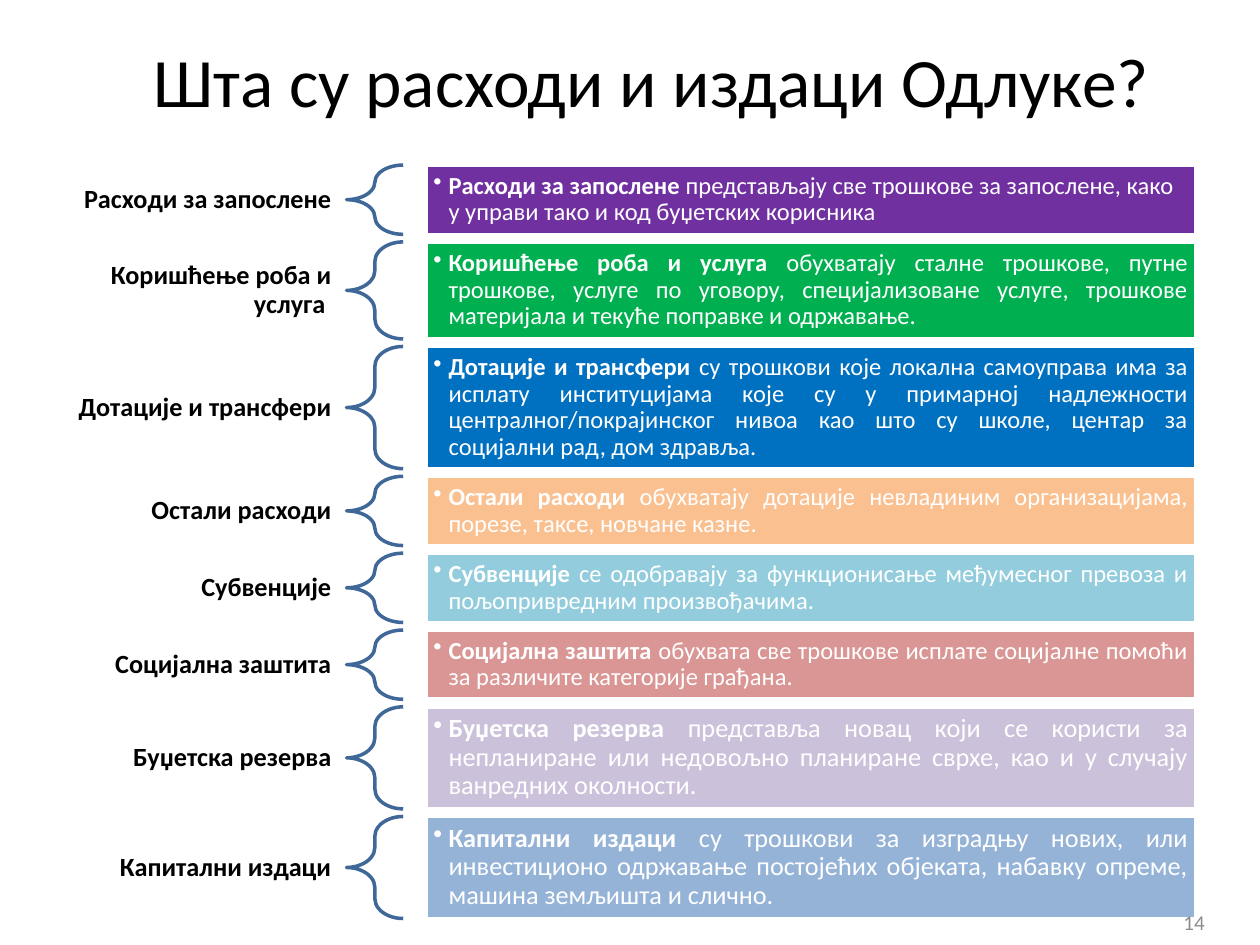
from pptx import Presentation
from pptx import util as u
from pptx.dml.color import RGBColor
from pptx.enum import shapes, text
from pptx.oxml.ns import qn
from lxml import etree

SCALE = 9144  # EMU in one px, 100 px to the inch
GAP = 6
TOP = 131
WHITE, BLACK, GREY, BLUE = "FFFFFF", "000000", "8C8C8C", "3F6797"
ALIGN = text.PP_ALIGN

# term, separator, explanation, fill, row height, label height, size, alignment
ROWS = [
    ("Расходи за запослене", " ", "представљају све трошкове за запослене, како "
     "у управи тако и код буџетских корисника",
     "7030A0", 55, 32, 14, ALIGN.LEFT),
    ("Коришћење роба и услуга ", "", "обухватају сталне трошкове, путне трошкове, "
     "услуге по уговору, специјализоване услуге, трошкове материјала и текуће "
     "поправке и одржавање.",
     "00B050", 77, 55, 14, ALIGN.JUSTIFY),
    ("Дотације и трансфери", " ", "су трошкови које локална самоуправа има за "
     "исплату институцијама које су у примарној надлежности "
     "централног/покрајинског нивоа као што су школе, центар за социјални рад, "
     "дом здравља.",
     "0070C0", 97, 32, 14, ALIGN.JUSTIFY),
    ("Остали расходи", " ", "обухватају дотације невладиним организацијама, "
     "порезе, таксе, новчане казне.",
     "FAC090", 55, 32, 14, ALIGN.JUSTIFY),
    ("Субвенције", " ", "сe одобравају за функционисање међумесног превоза и "
     "пољопривредним произвођачима.",
     "93CDDD", 55, 32, 14, ALIGN.JUSTIFY),
    ("Социјална заштита", " ", "обухвата све трошкове исплате социјалне помоћи "
     "за различите категорије грађана.",
     "D99694", 55, 32, 14, ALIGN.JUSTIFY),
    ("Буџетска резерва", " ", "представља новац који се користи за непланиране "
     "или недовољно планиране сврхе, као и у случају ванредних околности.",
     "CCC1DA", 81, 32, 15, ALIGN.JUSTIFY),
    ("Капитални издаци", " ", "су трошкови за изградњу нових, или инвестиционо "
     "одржавање постојећих објеката, набавку опреме, машина земљишта и слично.",
     "95B3D7", 81, 32, 15, ALIGN.JUSTIFY),
]


def px(n):
    return u.Emu(round(n * SCALE))


def box(*at):
    return [px(n) for n in at]


def rgb(code):
    return RGBColor.from_string(code)


def style(item, form):
    for name, value in form.items():
        setattr(item, name, value)


def frame(shape, side, edge):
    """Set wrap, middle anchor and insets of a text frame."""
    tf = shape.text_frame
    style(tf, {"word_wrap": True, "vertical_anchor": text.MSO_ANCHOR.MIDDLE,
               "margin_left": px(side), "margin_right": px(side),
               "margin_top": px(edge), "margin_bottom": px(edge)})
    return tf.paragraphs[0]


def write(para, words, size, color, bold=False):
    run = para.add_run()
    run.text = words
    style(run.font, {"name": "Calibri", "size": u.Pt(size), "bold": bold})
    run.font.color.rgb = rgb(color)


def bullet(para, indent):
    props = para._p.get_or_add_pPr()
    props.set("marL", str(px(indent)))
    props.set("indent", str(-px(indent)))
    etree.SubElement(props, qn("a:buChar")).set("char", "•")


def outline(shape, color):
    shape.shadow.inherit = False
    shape.line.color.rgb = rgb(color)
    shape.line.width = u.Pt(2)


def title(slide, words):
    shape = slide.shapes.title
    style(shape, dict(zip(("left", "top", "width", "height"),
                          box(67, 29, 900, 68))))
    para = frame(shape, 10, 5)
    para.alignment = ALIGN.CENTER
    write(para, words, 39.6, BLACK)


def label(slide, words, mid, high):
    shape = slide.shapes.add_textbox(*box(50, mid - high / 2, 225, high))
    para = frame(shape, 12, 4)
    style(para, {"alignment": ALIGN.RIGHT, "line_spacing": 0.9})
    write(para, words, 15, BLACK, True)


def brace(slide, top, high):
    shape = slide.shapes.add_shape(shapes.MSO_SHAPE.LEFT_BRACE,
                                   *box(275, top, 45, high))
    shape.adjustments[0] = 0.35
    shape.adjustments[1] = 0.5
    shape.fill.background()
    outline(shape, BLUE)


def panel(slide, top, high, fill, parts, size, align):
    shape = slide.shapes.add_shape(shapes.MSO_SHAPE.RECTANGLE,
                                   *box(338, top, 611, high))
    shape.fill.solid()
    shape.fill.fore_color.rgb = rgb(fill)
    outline(shape, WHITE)
    para = frame(shape, 6, 6)
    style(para, {"alignment": align, "line_spacing": 0.9, "level": 1})
    bullet(para, 12)
    for words, bold in zip(parts, (True, False)):
        write(para, words, size, WHITE, bold)


def number(slide, words):
    shape = slide.shapes.add_textbox(*box(733, 712, 233, 40))
    para = frame(shape, 10, 5)
    para.alignment = ALIGN.RIGHT
    write(para, words, 12, GREY)


def main():
    deck = Presentation()
    deck.slide_width, deck.slide_height = box(1000, 750)
    slide = deck.slides.add_slide(deck.slide_layouts[5])
    title(slide, "Шта су расходи и издаци Одлуке?")
    top = TOP
    for term, sep, note, fill, high, tall, size, align in ROWS:
        label(slide, term, top + high / 2, tall)
        brace(slide, top, high)
        panel(slide, top, high, fill, (term + sep, note), size, align)
        top += high + GAP
    number(slide, "14")
    deck.save("out.pptx")


if __name__ == "__main__":
    main()
